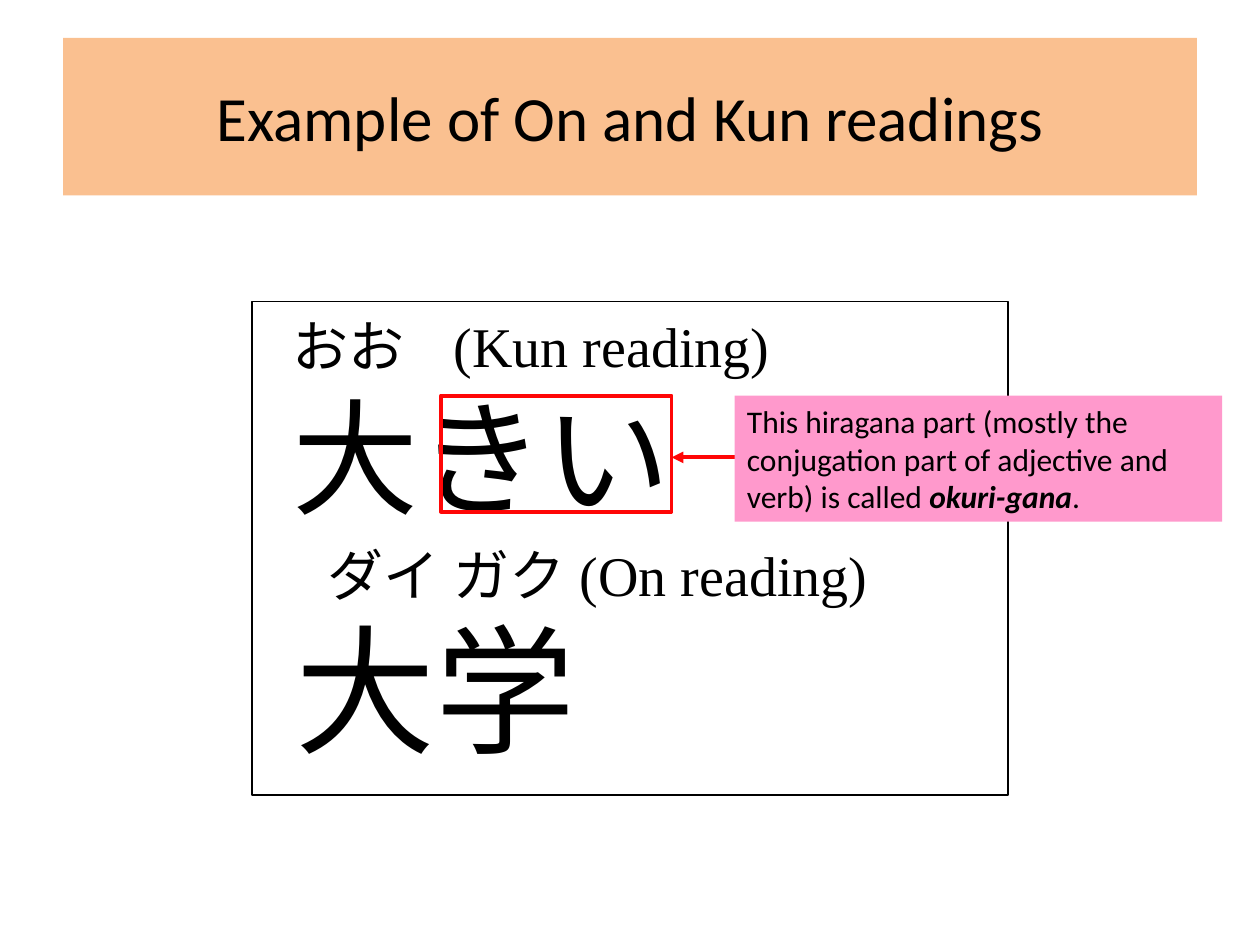
from lxml import etree
from pptx import Presentation
from pptx.dml.color import RGBColor
from pptx.enum.shapes import MSO_CONNECTOR, MSO_SHAPE
from pptx.enum.text import MSO_ANCHOR, MSO_AUTO_SIZE, PP_ALIGN
from pptx.oxml.ns import qn
from pptx.util import Inches, Pt

BLACK = RGBColor(0x00, 0x00, 0x00)
WHITE = RGBColor(0xFF, 0xFF, 0xFF)
RED = RGBColor(0xFF, 0x06, 0x06)
PINK = RGBColor(0xFF, 0x99, 0xCC)
ORANGE = RGBColor(0xFA, 0xC0, 0x90)
SANS = "Calibri"
SERIF = "Times New Roman"
RECTANGLE = MSO_SHAPE.RECTANGLE
STRAIGHT = MSO_CONNECTOR.STRAIGHT
CENTER = PP_ALIGN.CENTER
LEFT = PP_ALIGN.LEFT
TOP = MSO_ANCHOR.TOP
MIDDLE = MSO_ANCHOR.MIDDLE
NO_FIT = MSO_AUTO_SIZE.NONE
GROW = MSO_AUTO_SIZE.SHAPE_TO_FIT_TEXT

# Each row: line spacing, tab stops in inches, (text, size) spans
READING_ROWS = [
    (0.5, [1.6], [(" ", 72), ("おお\t(Kun reading)", 32)]),
    (0.8, [], [(" 大きい", 72)]),
    (1.0, [0.44, 1.53, 2.62], [("\tダイ\tガク\t(On reading)", 32)]),
    (0.8, [], [(" 大学", 80)]),
]
# Each line: (text, emphasised) spans
NOTE_LINES = [
    [("This hiragana part (mostly the", False)],
    [("conjugation part of adjective and", False)],
    [("verb) is called ", False), ("okuri-gana", True), (".", False)],
]


def add_span(para, text, size, font=SANS, color=BLACK, emphasis=False):
    span = para.add_run()
    span.text = text
    span.font.size = Pt(size)
    span.font.name = font
    span.font.color.rgb = color
    span.font.bold = span.font.italic = emphasis


def place(shape, box):
    shape.left, shape.top, shape.width, shape.height = map(Inches, box)


def paint(shape, fill=None, line=None, width=0.75):
    if fill is None:
        shape.fill.background()
    else:
        shape.fill.solid()
        shape.fill.fore_color.rgb = fill
    if line is None:
        shape.line.fill.background()
    else:
        shape.line.color.rgb = line
        shape.line.width = Pt(width)


def add_rectangle(page, box, **colors):
    shape = page.shapes.add_shape(RECTANGLE, *map(Inches, box))
    shape.shadow.inherit = False
    paint(shape, **colors)
    return shape


def next_para(frame, index):
    return frame.add_paragraph() if index else frame.paragraphs[0]


def set_plain_tabs(para, stops):
    """Drop the bullet and its indent, and set tab stops in inches."""
    properties = para._p.get_or_add_pPr()
    properties.set("marL", "0")
    properties.set("indent", "0")
    etree.SubElement(properties, qn("a:buNone"))
    if stops:
        tabs = etree.SubElement(properties, qn("a:tabLst"))
        for stop in stops:
            etree.SubElement(tabs, qn("a:tab"), pos=str(Inches(stop)), algn="l")


def fill_title(page, box):
    title = page.shapes.title
    place(title, box)
    paint(title, fill=ORANGE)
    title.text_frame.vertical_anchor = MIDDLE
    para = title.text_frame.paragraphs[0]
    para.alignment = CENTER
    add_span(para, "Example of On and Kun readings", 36)


def fill_readings(page, box):
    body = page.placeholders[1]
    place(body, box)
    paint(body, fill=WHITE, line=BLACK)
    frame = body.text_frame
    frame.auto_size = NO_FIT
    for index, (spacing, stops, spans) in enumerate(READING_ROWS):
        para = next_para(frame, index)
        para.line_spacing = spacing
        set_plain_tabs(para, stops)
        for text, size in spans:
            add_span(para, text, size, font=SERIF)


def add_note(page, box):
    note = add_rectangle(page, box, fill=PINK)
    frame = note.text_frame
    frame.word_wrap = False
    frame.auto_size = GROW
    frame.vertical_anchor = TOP
    for index, spans in enumerate(NOTE_LINES):
        para = next_para(frame, index)
        para.alignment = LEFT
        for text, emphasis in spans:
            add_span(para, text, 18, emphasis=emphasis)


def add_arrow(page, start, end):
    arrow = page.shapes.add_connector(STRAIGHT, *map(Inches, start + end))
    arrow.line.color.rgb = RED
    arrow.line.width = Pt(2.25)
    etree.SubElement(arrow.line._get_or_add_ln(), qn("a:tailEnd"), type="triangle")
    etree.SubElement(arrow._element.spPr, qn("a:effectLst"))


def main():
    deck = Presentation()
    deck.slide_width, deck.slide_height = Inches(10), Inches(7.5)
    page = deck.slides.add_slide(deck.slide_layouts[1])
    fill_title(page, (0.5, 0.3, 9, 1.25))
    fill_readings(page, (2, 2.39, 6, 3.92))
    add_rectangle(page, (3.5, 3.14, 1.83, 0.92), line=RED, width=2.25)
    add_arrow(page, (5.83, 3.63), (5.33, 3.63))
    add_note(page, (5.83, 3.14, 3.87, 1))
    deck.save("out.pptx")


if __name__ == "__main__":
    main()
